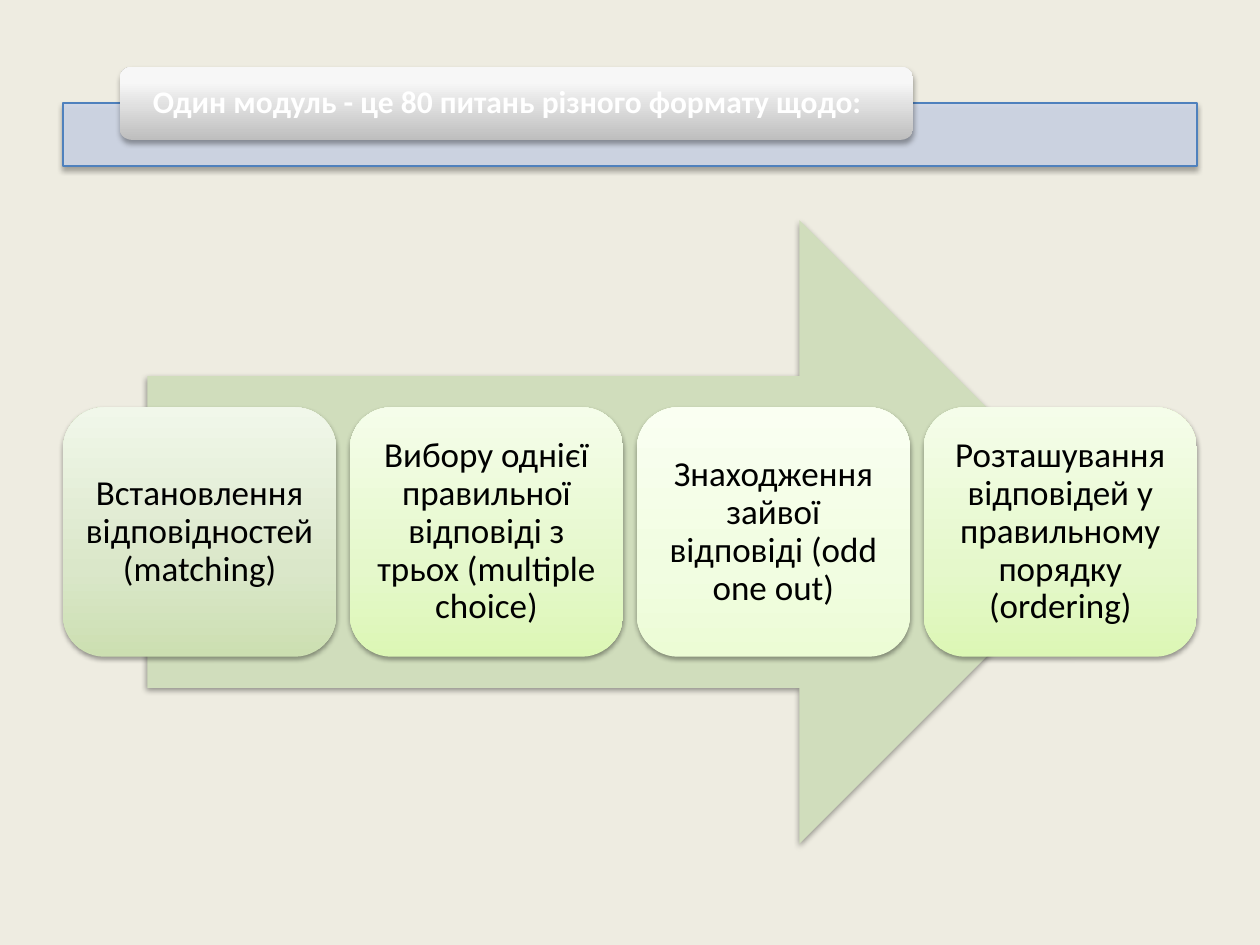
from dataclasses import dataclass

from lxml.etree import SubElement
from pptx import Presentation
from pptx.dml.color import RGBColor
from pptx.enum.shapes import MSO_SHAPE as Shape
from pptx.enum.text import MSO_ANCHOR as Anchor, PP_ALIGN as Align
from pptx.oxml.ns import qn
from pptx.util import Cm, Pt

GREEN = ((0, "CCDFB1"), (35, "DAE7C9"), (100, "F1F7EA"))
LIME = ((0, "DCF7B5"), (35, "E5F8CB"), (100, "F5FDEA"))
PALE = ((0, "ECFCD5"), (35, "F1FDE1"), (100, "FAFFF2"))
SILVER = ((0, "BEBEBE"), (80, "F7F7F7"), (100, "F8F8F8"))

LEFT, SPAN = 1.27, 22.86
CARD_TOP, CARD_WIDTH, CARD_HEIGHT = 8.21, 5.51, 5.03


@dataclass
class Card:
    text: str
    stops: tuple


CARDS = [
    Card("Встановлення відповідностей (matching)", GREEN),
    Card("Вибору однієї правильної відповіді з трьох (multiple choice)", LIME),
    Card("Знаходження зайвої відповіді (odd one out)", PALE),
    Card("Розташування відповідей у правильному порядку (ordering)", LIME),
]


def colour(value: str) -> RGBColor:
    return RGBColor.from_string(value)


def add_colour(parent, value: str, alpha: int = 100) -> None:
    """Append an XML colour with its opacity in percent."""
    node = SubElement(parent, qn("a:srgbClr"), val=value)
    if alpha < 100:
        SubElement(node, qn("a:alpha"), val=str(alpha * 1000))


def add_shadow(shape, alpha: int, distance: float) -> None:
    shape.shadow.inherit = False
    effects = shape._element.spPr.find(qn("a:effectLst"))
    shadow = SubElement(effects, qn("a:outerShdw"), blurRad=str(Pt(3.1)),
                        dist=str(Pt(distance)), dir="5400000", rotWithShape="0")
    add_colour(shadow, "000000", alpha)


def fill_gradient(shape, stops: tuple) -> None:
    """Run the colour stops from the bottom edge to the top."""
    shape.fill.gradient()
    shape.fill.gradient_angle = 90
    stop_list = shape._element.spPr.find(qn("a:gradFill")).find(qn("a:gsLst"))
    stop_list.clear()
    for position, value in stops:
        add_colour(SubElement(stop_list, qn("a:gs"), pos=str(position * 1000)), value)


def add_block(page, kind: Shape, place: tuple, fill, alpha: int = 38, distance: float = 1.6):
    """Draw an unlined shape filled with a hex colour or gradient stops."""
    block = page.shapes.add_shape(kind, *map(Cm, place))
    if isinstance(fill, str):
        block.fill.solid()
        block.fill.fore_color.rgb = colour(fill)
    else:
        fill_gradient(block, fill)
    block.line.fill.background()
    add_shadow(block, alpha, distance)
    return block


def write(shape, text: str, align: Align, margins: tuple, ink: str, **font) -> None:
    frame = shape.text_frame
    side, end = map(Cm, margins)
    layout = {"word_wrap": True, "vertical_anchor": Anchor.MIDDLE, "margin_left": side,
              "margin_right": side, "margin_top": end, "margin_bottom": end}
    for name, value in layout.items():
        setattr(frame, name, value)
    para = frame.paragraphs[0]
    para.alignment, para.line_spacing = align, 0.9
    span = para.add_run()
    span.text = text
    span.font.color.rgb = colour(ink)
    for name, value in {"name": "Calibri", **font}.items():
        setattr(span.font, name, value)


def draw_heading(page) -> None:
    band = add_block(page, Shape.RECTANGLE, (LEFT, 2.08, SPAN, 1.27), "D0D8E8", 35, 1.8)
    fill_colour = band._element.spPr.find(qn("a:solidFill"))[0]
    SubElement(fill_colour, qn("a:alpha"), val="90000")
    band.line.color.rgb = colour("4F81BD")
    band.line.width = Pt(0.75)
    label = add_block(page, Shape.ROUNDED_RECTANGLE, (2.41, 1.35, 16, 1.47), SILVER, 35, 1.8)
    write(label, "Один модуль - це 80 питань різного формату щодо:", Align.LEFT,
          (0.6, 0), "FFFFFF", size=Pt(18), bold=True)


def draw_cards(page) -> None:
    step = (SPAN - CARD_WIDTH) / (len(CARDS) - 1)
    for index, card in enumerate(CARDS):
        place = (LEFT + index * step, CARD_TOP, CARD_WIDTH, CARD_HEIGHT)
        box = add_block(page, Shape.ROUNDED_RECTANGLE, place, card.stops)
        write(box, card.text, Align.CENTER, (0.2, 0.2), "000000", size=Pt(20))


def main() -> None:
    deck = Presentation()
    deck.slide_width, deck.slide_height = Cm(25.4), Cm(19.05)
    page = deck.slides.add_slide(deck.slide_layouts[6])
    page.background.fill.solid()
    page.background.fill.fore_color.rgb = colour("EEECE1")
    draw_heading(page)
    add_block(page, Shape.RIGHT_ARROW, (2.97, 4.44, 19.43, 12.57), "D0DDBC")
    draw_cards(page)
    deck.save("out.pptx")


if __name__ == "__main__":
    main()
